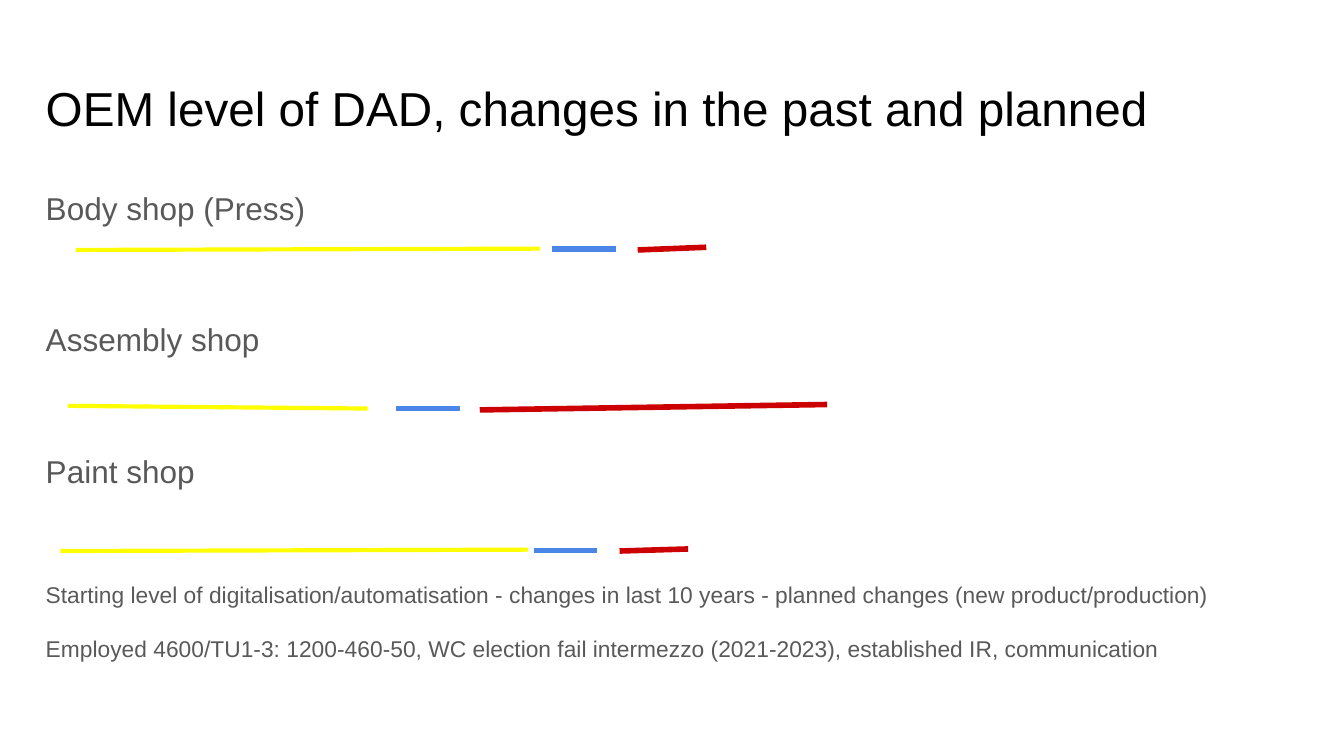
from dataclasses import dataclass

from lxml import etree
from pptx import Presentation
from pptx import util as u
from pptx.dml import color
from pptx.enum import shapes, text
from pptx.oxml import ns

PX = u.Inches(1) // 200


@dataclass(frozen=True)
class Theme:
    font: str = "Arial"
    title_color: str = "000000"
    body_color: str = "595959"
    start_color: str = "FFFF00"
    change_color: str = "4A86E8"
    planned_color: str = "CC0000"
    title_size: float = 25.5
    shop_size: float = 16.9
    note_size: float = 12.2


theme = Theme()


def prepare_frame(frame):
    frame.word_wrap = True
    frame.auto_size = text.MSO_AUTO_SIZE.NONE
    frame.vertical_anchor = text.MSO_ANCHOR.TOP
    frame.margin_left = frame.margin_right = 0
    frame.margin_top = frame.margin_bottom = 20 * PX


def write_paragraph(paragraph, words, size, rgb):
    paragraph.text = words
    paragraph.alignment = text.PP_ALIGN.LEFT
    font = paragraph.runs[0].font
    font.name = theme.font
    font.size = u.Pt(size)
    font.color.rgb = color.RGBColor.from_string(rgb)


presentation = Presentation()
presentation.slide_width = 2000 * PX
presentation.slide_height = 1125 * PX
slide = presentation.slides.add_slide(presentation.slide_layouts.get_by_name("Title Only"))

# Title
title = slide.shapes.title
title.left, title.top, title.width, title.height = 68 * PX, 98 * PX, 1864 * PX, 126 * PX
prepare_frame(title.text_frame)
write_paragraph(title.text_frame.paragraphs[0],
                "OEM level of DAD, changes in the past and planned",
                theme.title_size, theme.title_color)

# Shop names and notes: words, type size, space before in points
body_lines = [
    ("Body shop (Press)", theme.shop_size, 0),
    ("Assembly shop", theme.shop_size, 47),
    ("Paint shop", theme.shop_size, 47),
    ("Starting level of digitalisation/automatisation - changes in last 10 years"
     " - planned changes (new product/production)", theme.note_size, 47),
    ("Employed 4600/TU1-3: 1200-460-50, WC election fail intermezzo (2021-2023),"
     " established IR, communication", theme.note_size, 12),
]
body = slide.shapes.add_textbox(68 * PX, 253 * PX, 1910 * PX, 748 * PX)
prepare_frame(body.text_frame)
for index, (words, size, space_before) in enumerate(body_lines):
    paragraph = body.text_frame.add_paragraph() if index else body.text_frame.paragraphs[0]
    write_paragraph(paragraph, words, size, theme.body_color)
    paragraph.line_spacing = 1.15
    paragraph.space_before = u.Pt(space_before)

# Each shop: starting level, past changes, planned changes (x1, y1, x2, y2)
line_styles = [(theme.start_color, 2.25), (theme.change_color, 3), (theme.planned_color, 3)]
shop_lines = [
    [(113, 372, 804, 370), (822, 371, 916, 371), (949, 372, 1051, 368)],
    [(101, 604, 547, 608), (590, 608, 684, 608), (714, 610, 1231, 602)],
    [(90, 820, 786, 818), (794, 819, 888, 819), (922, 820, 1024, 817)],
]
for lines in shop_lines:
    for ends, (rgb, width) in zip(lines, line_styles):
        connector = slide.shapes.add_connector(
            shapes.MSO_CONNECTOR.STRAIGHT, *(value * PX for value in ends))
        connector.line.color.rgb = color.RGBColor.from_string(rgb)
        connector.line.width = u.Pt(width)
        etree.SubElement(connector._element.spPr, ns.qn("a:effectLst"))

presentation.save("out.pptx")
